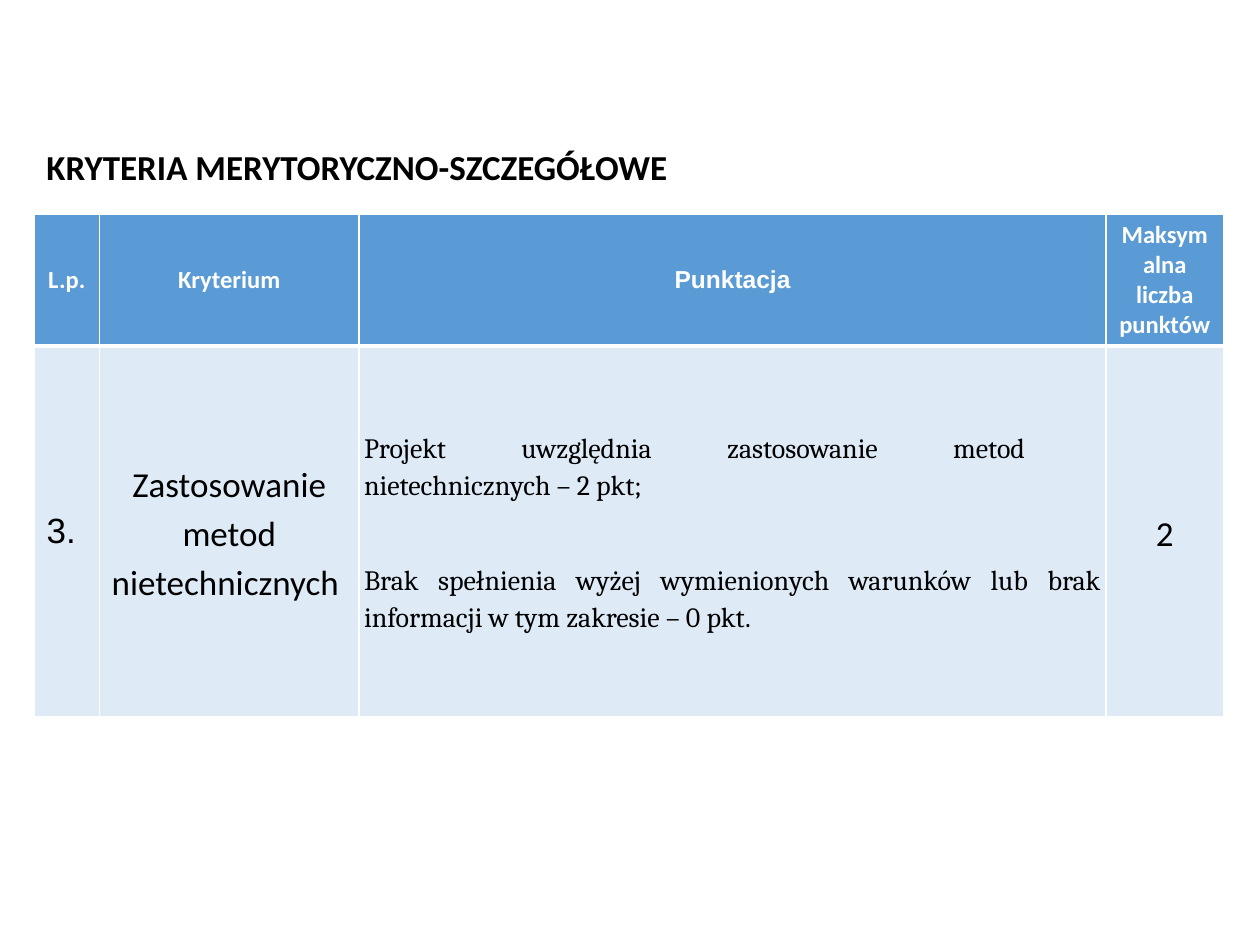
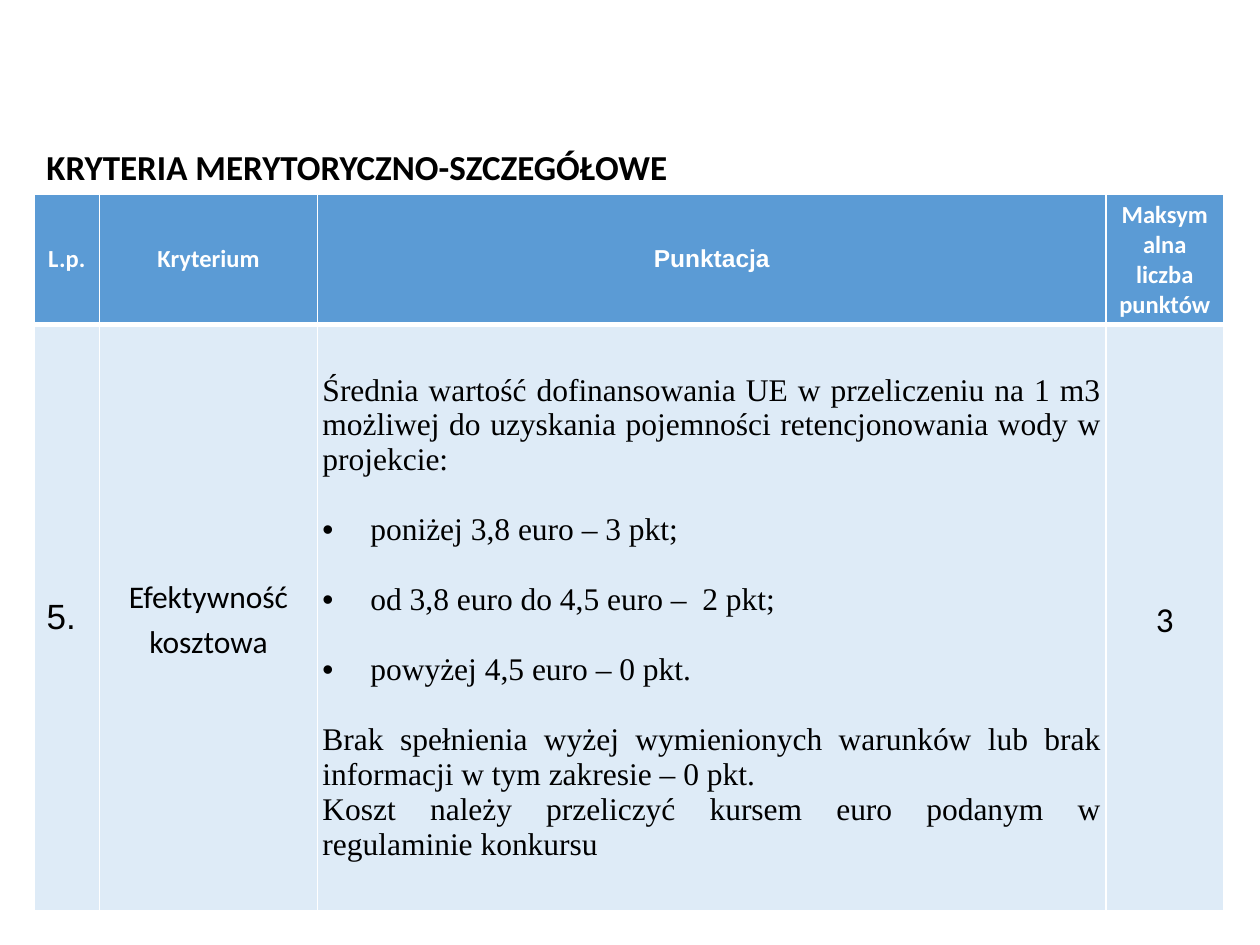
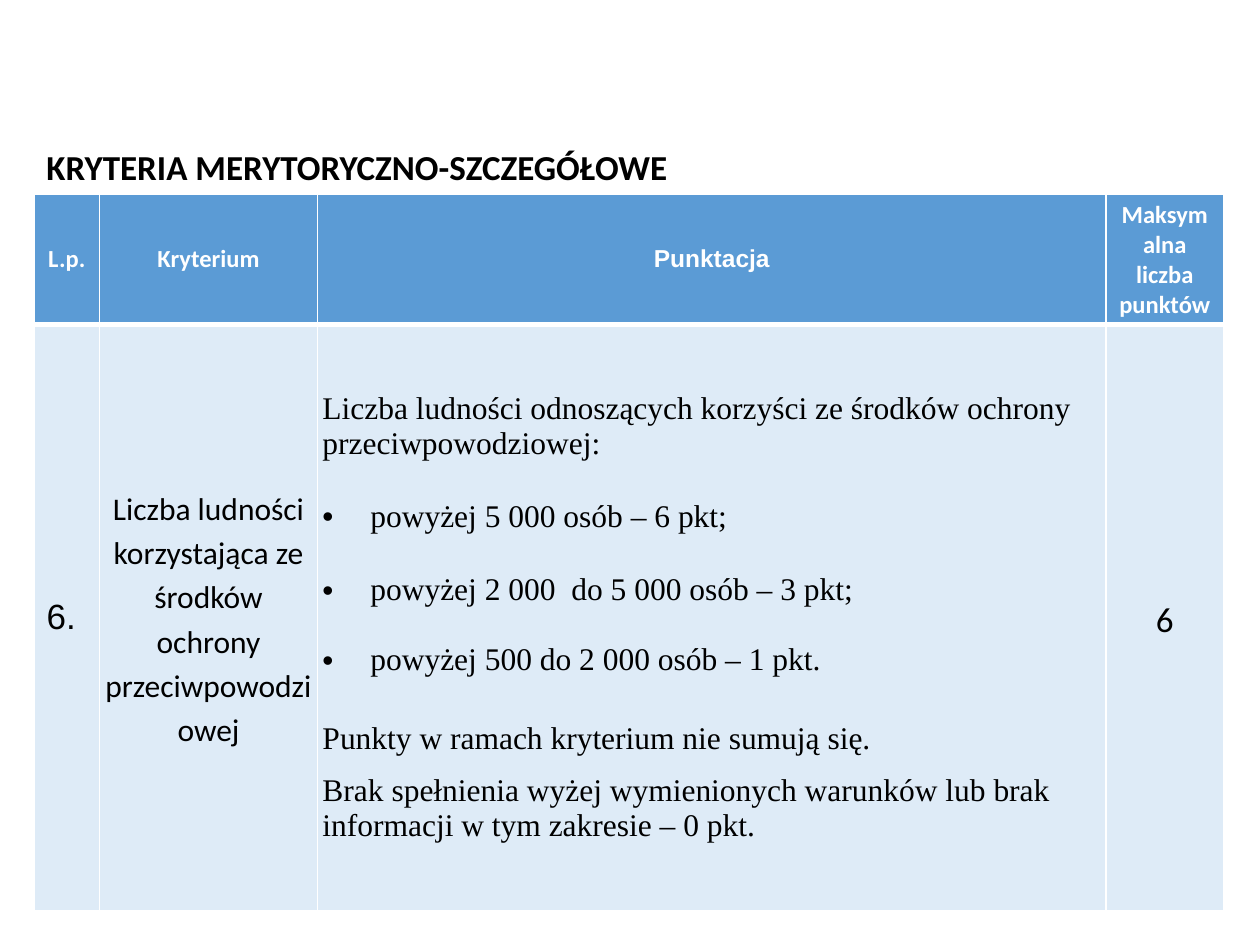
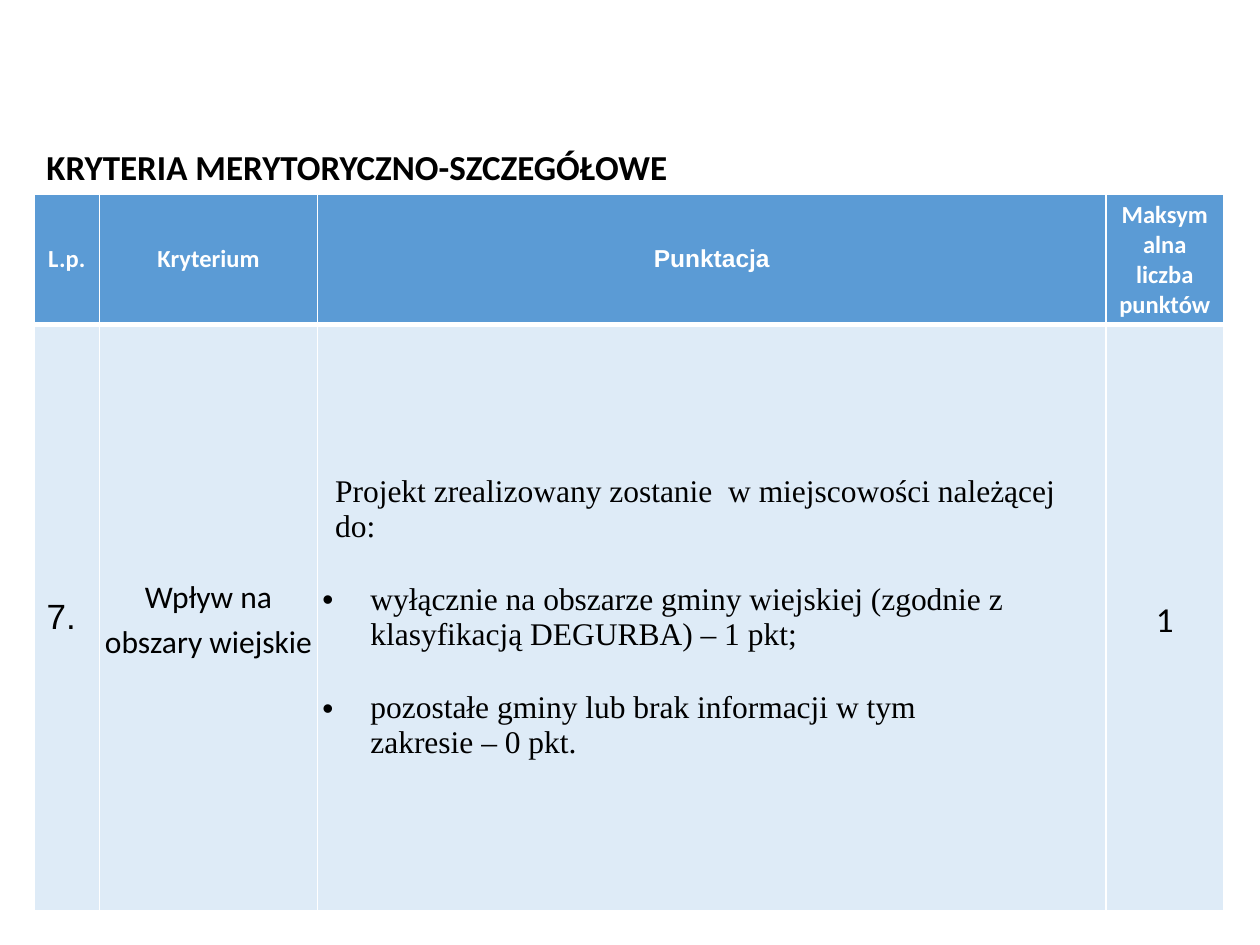
from dataclasses import dataclass

from lxml import etree
from pptx import Presentation
from pptx import util as u
from pptx.dml.color import RGBColor
from pptx.enum import text
from pptx.oxml import ns

HEADING = "KRYTERIA MERYTORYCZNO-SZCZEGÓŁOWE"
COLUMNS = ["L.p.", "Kryterium", "Punktacja", "Maksymalna liczba punktów"]


@dataclass(frozen=True)
class Theme:
    header_fill: str = "5B9BD5"
    body_fill: str = "DEEBF7"
    light: str = "FFFFFF"
    dark: str = "000000"
    main_font: str = "Calibri"
    plain_font: str = "Arial"
    heading_size: int = 20
    header_size: int = 14
    number_size: int = 20
    thin: int = 1
    thick: int = 3


@dataclass(frozen=True)
class Line:
    words: str
    before: float = 0
    justified: bool = False
    bullet: bool = False
    indent: float = 0
    spacing: float = 1


THEME = Theme()
LEFT, TIGHT_INSET = 0.27, 0.04
NUMBER_WIDTH, MIDDLE_WIDTH, POINTS_WIDTH = 0.52, 7.99, 0.93
HEADER_HEIGHT = 1.03
BULLET_INDENT = 0.38
LOOSE = 1.15

WIDE = dict(top=1.54, body_height=4.65, criterion_width=1.73,
            criterion_size=18, scoring_size=18, scoring_font="Times New Roman")

CRITERIA = [
    dict(
        number="3.", criterion="Zastosowanie metod nietechnicznych ", points="2",
        top=1.7, body_height=2.94, criterion_width=2.06,
        criterion_size=20, scoring_size=16, scoring_font="Cambria",
        scoring=[
            Line("Projekt uwzględnia zastosowanie metod \vnietechnicznych – 2 pkt;",
                 justified=True, spacing=LOOSE),
            Line("Brak spełnienia wyżej wymienionych warunków lub brak informacji "
                 "w tym zakresie – 0 pkt.", before=33, justified=True, spacing=LOOSE),
        ],
    ),
    dict(
        WIDE, number="5.", criterion="Efektywność kosztowa", points="3",
        scoring=[
            Line("Średnia wartość dofinansowania UE w przeliczeniu na 1 m3 możliwej "
                 "do uzyskania pojemności retencjonowania wody w projekcie:", justified=True),
            Line("poniżej 3,8 euro – 3 pkt;", before=20, bullet=True),
            Line("od 3,8 euro do 4,5 euro –  2 pkt;", before=20, bullet=True),
            Line("powyżej 4,5 euro – 0 pkt.", before=20, bullet=True),
            Line("Brak spełnienia wyżej wymienionych warunków lub brak informacji "
                 "w tym zakresie – 0 pkt.", before=20, justified=True),
            Line("Koszt należy przeliczyć kursem euro podanym w regulaminie konkursu",
                 justified=True),
        ],
    ),
    dict(
        WIDE, number="6.", points="6",
        criterion="Liczba ludności korzystająca ze środków ochrony przeciwpowodziowej",
        scoring=[
            Line("Liczba ludności odnoszących korzyści ze środków ochrony "
                 "przeciwpowodziowej:"),
            Line("powyżej 5 000 osób – 6 pkt;", before=22, bullet=True),
            Line("powyżej 2 000  do 5 000 osób – 3 pkt;", before=22, bullet=True),
            Line("powyżej 500 do 2 000 osób – 1 pkt.", before=20, bullet=True),
            Line("Punkty w ramach kryterium nie sumują się.",
                 before=22, justified=True, spacing=LOOSE),
            Line("Brak spełnienia wyżej wymienionych warunków lub brak informacji "
                 "w tym zakresie – 0 pkt.", before=10),
        ],
    ),
    dict(
        WIDE, number="7.", criterion="Wpływ na obszary wiejskie", points="1",
        scoring=[
            Line("Projekt zrealizowany zostanie  w miejscowości należącej do:", indent=0.1),
            Line("wyłącznie na obszarze gminy wiejskiej (zgodnie z klasyfikacją "
                 "DEGURBA) – 1 pkt;", before=22, bullet=True),
            Line("pozostałe gminy lub brak informacji w tym \vzakresie – 0 pkt.",
                 before=22, bullet=True),
        ],
    ),
]


def style_runs(paragraph, font, size, color, bold=False):
    for run in paragraph.runs:
        run.font.name = font
        run.font.size = u.Pt(size)
        run.font.bold = bold
        run.font.color.rgb = RGBColor.from_string(color)


def set_borders(cell, **widths):
    properties = cell._tc.get_or_add_tcPr()
    for position, (side, width) in enumerate(widths.items()):
        border = etree.Element(ns.qn(f"a:ln{side}"), w=str(u.Pt(width)))
        fill = etree.SubElement(border, ns.qn("a:solidFill"))
        etree.SubElement(fill, ns.qn("a:srgbClr"), val=THEME.light)
        properties.insert(position, border)


def prepare_cell(cell, fill, inset=None):
    cell.fill.solid()
    cell.fill.fore_color.rgb = RGBColor.from_string(fill)
    cell.vertical_anchor = text.MSO_ANCHOR.MIDDLE
    if inset is not None:
        cell.margin_left = cell.margin_right = u.Inches(inset)
        cell.margin_top = cell.margin_bottom = u.Inches(inset)


def write_cell(cell, words, font, size, color, bold=False, centered=True, spacing=1):
    cell.text_frame.text = words
    paragraph = cell.text_frame.paragraphs[0]
    if centered:
        paragraph.alignment = text.PP_ALIGN.CENTER
    paragraph.line_spacing = spacing
    style_runs(paragraph, font, size, color, bold)


def write_scoring(cell, lines, font, size):
    frame = cell.text_frame
    for index, line in enumerate(lines):
        paragraph = frame.add_paragraph() if index else frame.paragraphs[0]
        paragraph.text = line.words
        paragraph.alignment = text.PP_ALIGN.JUSTIFY if line.justified else text.PP_ALIGN.LEFT
        paragraph.line_spacing = line.spacing
        if line.before:
            paragraph.space_before = u.Pt(line.before)
        properties = paragraph._p.get_or_add_pPr()
        if line.bullet:
            properties.set("marL", str(u.Inches(BULLET_INDENT)))
            properties.set("indent", str(-u.Inches(BULLET_INDENT)))
            etree.SubElement(properties, ns.qn("a:buFont"), typeface=THEME.plain_font)
            etree.SubElement(properties, ns.qn("a:buChar"), char="•")
        elif line.indent:
            properties.set("marL", str(u.Inches(line.indent)))
        style_runs(paragraph, font, size, THEME.dark)


def add_criteria_table(slide, item):
    widths = [NUMBER_WIDTH, item["criterion_width"],
              MIDDLE_WIDTH - item["criterion_width"], POINTS_WIDTH]
    heights = [HEADER_HEIGHT, item["body_height"]]
    table = slide.shapes.add_table(
        len(heights), len(widths), u.Inches(LEFT), u.Inches(item["top"]),
        u.Inches(sum(widths)), u.Inches(sum(heights))).table
    table.horz_banding = False
    for column, width in zip(table.columns, widths):
        column.width = u.Inches(width)
    for row, height in zip(table.rows, heights):
        row.height = u.Inches(height)

    for index, label in enumerate(COLUMNS):
        header, body = table.cell(0, index), table.cell(1, index)
        prepare_cell(header, THEME.header_fill)
        prepare_cell(body, THEME.body_fill, TIGHT_INSET if index else None)
        set_borders(header, L=THEME.thin, R=THEME.thin, T=THEME.thin, B=THEME.thick)
        set_borders(body, L=THEME.thin, R=THEME.thin, T=THEME.thick, B=THEME.thin)
        font = THEME.plain_font if label == "Punktacja" else THEME.main_font
        write_cell(header, label, font, THEME.header_size, THEME.light, bold=True)

    number, criterion, scoring, points = table.rows[1].cells
    write_cell(number, item["number"], THEME.plain_font, THEME.number_size,
               THEME.dark, centered=False)
    write_cell(criterion, item["criterion"], THEME.main_font, item["criterion_size"],
               THEME.dark, spacing=LOOSE)
    write_scoring(scoring, item["scoring"], item["scoring_font"], item["scoring_size"])
    write_cell(points, item["points"], THEME.main_font, THEME.number_size,
               THEME.dark, spacing=LOOSE)


def add_heading(slide):
    frame = slide.shapes.add_textbox(
        u.Inches(LEFT), u.Inches(1.1), u.Inches(5.17), u.Inches(0.44)).text_frame
    frame.text = HEADING
    frame.word_wrap = False
    frame.auto_size = text.MSO_AUTO_SIZE.SHAPE_TO_FIT_TEXT
    frame.vertical_anchor = text.MSO_ANCHOR.MIDDLE
    style_runs(frame.paragraphs[0], THEME.main_font, THEME.heading_size, THEME.dark, bold=True)


def main():
    deck = Presentation()
    deck.slide_width, deck.slide_height = u.Inches(10), u.Inches(7.5)
    for item in CRITERIA:
        slide = deck.slides.add_slide(deck.slide_layouts[6])
        add_criteria_table(slide, item)
        add_heading(slide)
    deck.save("out.pptx")


if __name__ == "__main__":
    main()
